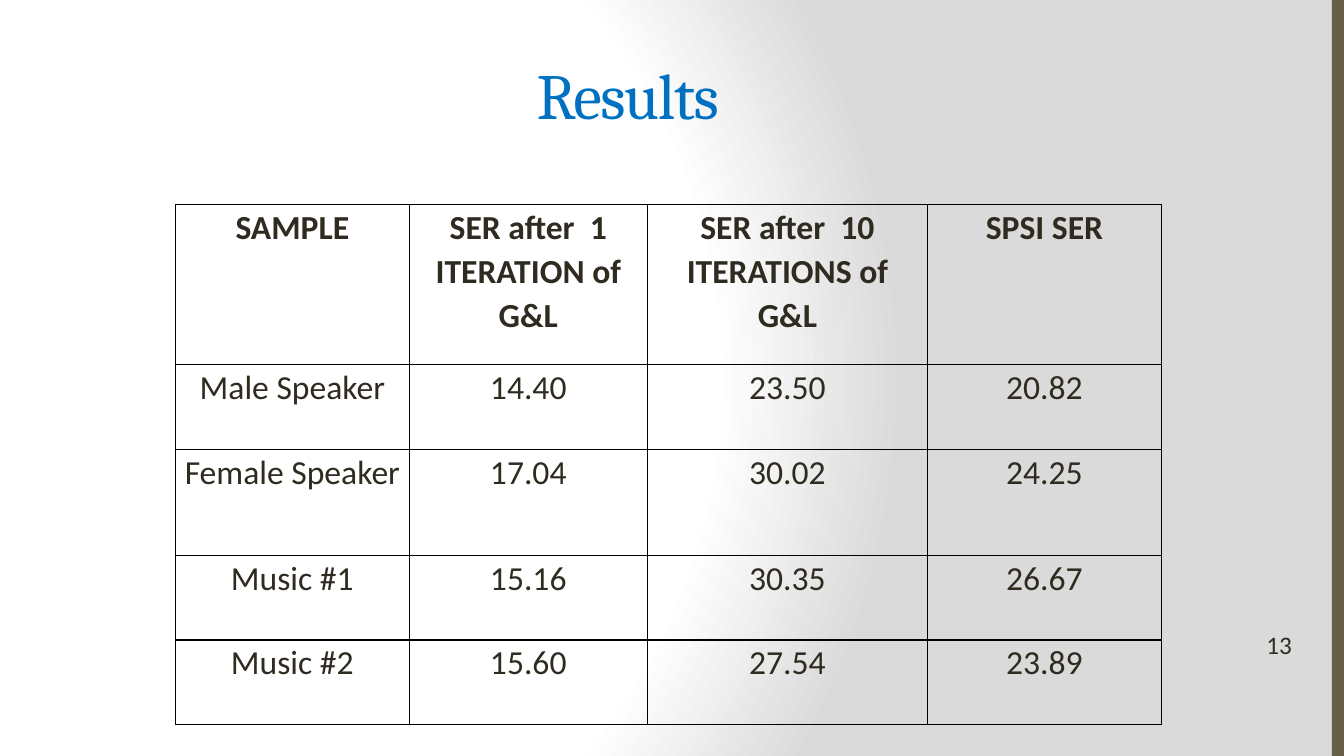
from pptx import Presentation
from pptx.dml.color import RGBColor as RGB
from pptx.enum.shapes import MSO_SHAPE as Shape
from pptx.enum.text import MSO_ANCHOR as Anchor, PP_ALIGN as Align
from pptx.oxml import parse_xml
from pptx.oxml.ns import nsdecls
from pptx.util import Inches, Pt


def color(code):
    return RGB.from_string(code)


def write(frame, text, size=24, font="Calibri", ink="2F2B20", bold=False,
          align=Align.CENTER, space=1.0, track=0):
    frame.word_wrap = True
    par = frame.paragraphs[0]
    par.alignment = align
    par.line_spacing = space
    run = par.add_run()
    run.text = text
    run.font.size = Pt(size)
    run.font.name = font
    run.font.bold = bold
    run.font.color.rgb = color(ink)
    if track:
        run.font._element.set("spc", str(track))


class Deck:
    edge = "000000"
    trim = "675E47"

    def __init__(self, file):
        self.slide = file.slides.add_slide(file.slide_layouts[6])
        self.shapes = self.slide.shapes

    def backdrop(self, stops, focus):
        marks = "".join(f'<a:gs pos="{pos * 1000}"><a:srgbClr val="{code}"/></a:gs>'
                        for pos, code in stops)
        sides = " ".join(f'{side}="{val * 1000}"' for side, val in zip("ltrb", focus))
        self.slide.element.cSld.insert(0, parse_xml(
            f'<p:bg {nsdecls("p", "a")}><p:bgPr><a:gradFill rotWithShape="1">'
            f'<a:gsLst>{marks}</a:gsLst><a:path path="circle">'
            f'<a:fillToRect {sides}/></a:path></a:gradFill>'
            '<a:effectLst/></p:bgPr></p:bg>'))

    def shape(self, kind, box, fill=None):
        item = self.shapes.add_shape(kind, *map(Inches, box))
        item.shadow.inherit = False
        item.line.fill.background()
        if fill:
            item.fill.solid()
            item.fill.fore_color.rgb = color(fill)
        else:
            item.fill.background()
        return item

    def title(self, text, box):
        frame = self.shapes.add_textbox(*map(Inches, box)).text_frame
        frame.vertical_anchor = Anchor.MIDDLE
        write(frame, text, size=46, font="Cambria", ink="0070C0", track=-100)

    def number(self, text, box):
        item = self.shape(Shape.DOUBLE_BRACKET, box)
        item.adjustments[0] = 0.18
        item.text_frame.vertical_anchor = Anchor.MIDDLE
        write(item.text_frame, text, size=18, align=Align.LEFT)

    def border(self, cell):
        props = cell._tc.get_or_add_tcPr()
        for spot, side in enumerate("LRTB"):
            props.insert(spot, parse_xml(
                f'<a:ln{side} {nsdecls("a")} w="{Pt(1)}"><a:solidFill>'
                f'<a:srgbClr val="{self.edge}"/></a:solidFill></a:ln{side}>'))

    def table(self, rows, left, top, widths, heights):
        grid = self.shapes.add_table(
            len(rows), len(widths), Inches(left), Inches(top),
            Inches(sum(widths)), Inches(sum(heights))).table
        grid.first_row = grid.horz_banding = False
        for col, width in zip(grid.columns, widths):
            col.width = Inches(width)
        for r, (row, height) in enumerate(zip(rows, heights)):
            grid.rows[r].height = Inches(height)
            for c, text in enumerate(row):
                cell = grid.cell(r, c)
                cell.fill.background()
                cell.margin_left = cell.margin_right = Inches(0.07)
                cell.margin_top = cell.margin_bottom = 0
                write(cell.text_frame, text, bold=r == 0, space=1.07)
                self.border(cell)


def main():
    file = Presentation()
    file.slide_width, file.slide_height = Inches(13.33), Inches(7.5)
    deck = Deck(file)

    # Background and side bar
    deck.backdrop([(0, "FFFFFF"), (75, "FFFFFF"), (100, "DADADA")], (20, 50, 100, 50))
    deck.shape(Shape.RECTANGLE, (13.21, 0, 0.12, 7.5), deck.trim)

    # Title and page number
    deck.title("Results", (0.67, 0.3, 11.11, 1.25))
    deck.number("13", (12.44, 6.18, 0.8, 0.43))

    # Results table
    rows = [
        ("SAMPLE", "SER after  1 ITERATION of G&L",
         "SER after  10 ITERATIONS of G&L", "SPSI SER"),
        ("Male Speaker", "14.40", "23.50", "20.82"),
        ("Female Speaker", "17.04", "30.02", "24.25"),
        ("Music #1", "15.16", "30.35", "26.67"),
        ("Music #2", "15.60", "27.54", "23.89"),
    ]
    deck.table(rows, 1.74, 2.03, (2.32, 2.36, 2.78, 2.32),
               (1.59, 0.84, 1.05, 0.84, 0.84))

    file.save("out.pptx")


if __name__ == "__main__":
    main()
